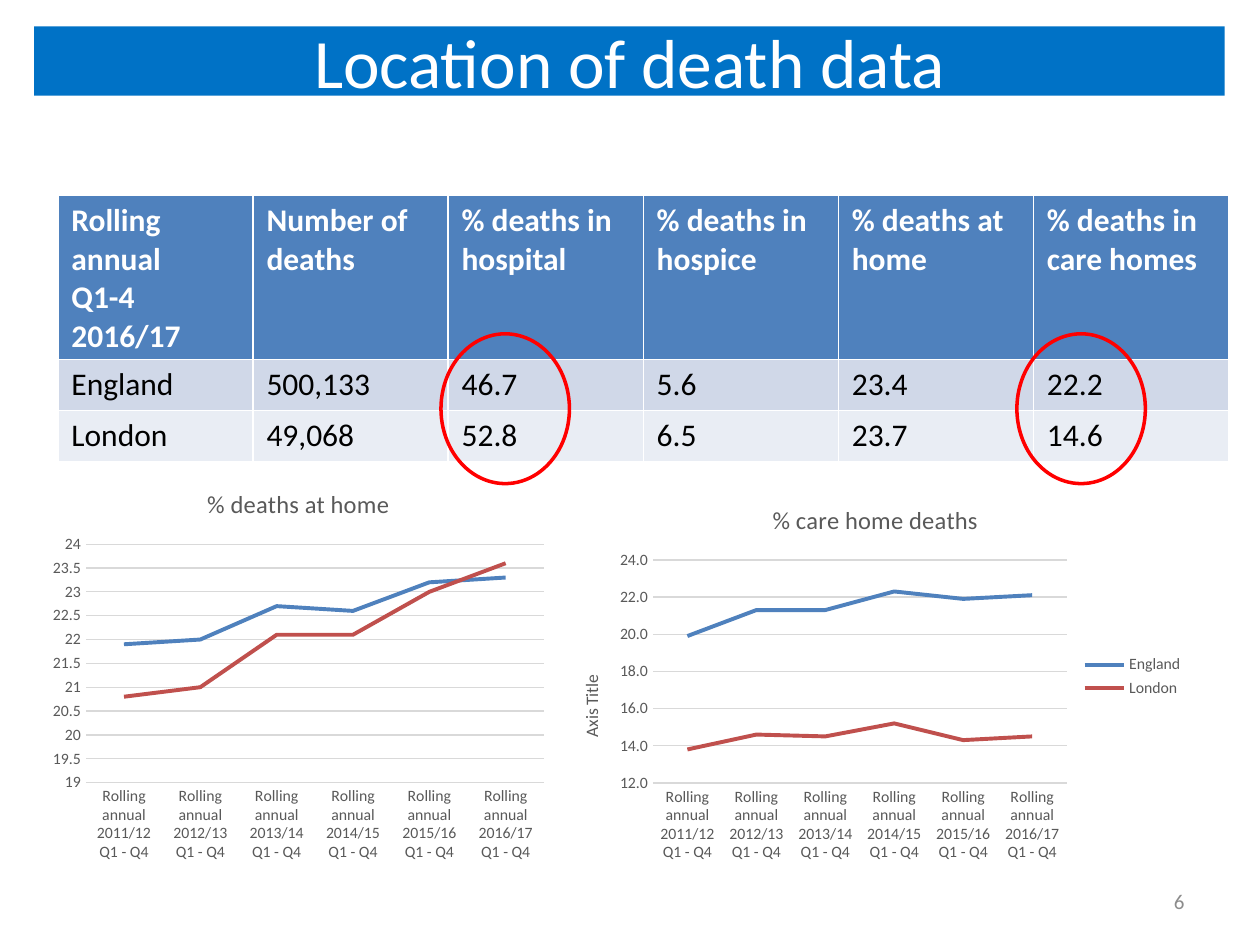
from pptx import Presentation
from pptx.chart.data import CategoryChartData as Data
from pptx.dml.color import RGBColor
from pptx.enum.chart import XL_CHART_TYPE as Kind, XL_LEGEND_POSITION as Spot, XL_TICK_MARK as Tick
from pptx.enum.shapes import MSO_SHAPE as Form
from pptx.enum.text import MSO_ANCHOR as Anchor, PP_ALIGN as Align
from pptx.util import Cm, Pt


def tint(hue):
    return RGBColor.from_string(hue)


def paint(part, hue):
    part.fill.solid()
    part.fill.fore_color.rgb = tint(hue)


def stroke(line, hue, width):
    line.color.rgb = tint(hue)
    line.width = Pt(width)


class Deck:
    """Holds the style and the current slide, and adds each kind of element."""

    face = "Calibri"
    blue, red, grey, rule = "4F81BD", "C0504D", "595959", "D9D9D9"
    bands = (blue, "D0D8E8", "E9EDF4")

    def __init__(self):
        self.show = Presentation()
        self.show.slide_width, self.show.slide_height = Cm(25.4), Cm(19.05)
        self.slide = self.show.slides.add_slide(self.show.slide_layouts[5])
        self.shapes = self.slide.shapes

    def font(self, font, size, hue, bold=False):
        font.name, font.size, font.bold = self.face, Pt(size), bold
        font.color.rgb = tint(hue)

    def title(self, text, box):
        bar = self.shapes.title
        bar.left, bar.top, bar.width, bar.height = map(Cm, box)
        paint(bar, "0072C6")
        frame = bar.text_frame
        frame.text = text
        frame.vertical_anchor = Anchor.MIDDLE
        line = frame.paragraphs[0]
        line.alignment = Align.CENTER
        self.font(line.font, 39.6, "FFFFFF")

    def number(self, text, box):
        frame = self.shapes.add_textbox(*map(Cm, box)).text_frame
        frame.word_wrap = True
        frame.vertical_anchor = Anchor.MIDDLE
        line = frame.paragraphs[0]
        line.text, line.alignment = text, Align.RIGHT
        self.font(line.font, 12, "8C8C8C")

    def table(self, rows, box, highs):
        grid = self.shapes.add_table(len(rows), len(rows[0]), *map(Cm, box)).table
        for r, row in enumerate(rows):
            grid.rows[r].height = Cm(highs[r])
            for c, text in enumerate(row):
                cell = grid.cell(r, c)
                cell.text = text
                cell.margin_left = cell.margin_right = Cm(0.27)
                paint(cell, self.bands[r])
                for line in cell.text_frame.paragraphs:
                    self.font(line.font, 18, "000000" if r else "FFFFFF", r == 0)

    def axis(self, axis):
        axis.major_tick_mark = axis.minor_tick_mark = Tick.NONE
        self.font(axis.tick_labels.font, 9, self.grey)

    def chart(self, title, cats, series, box, scale, form, label=None):
        data = Data(number_format=form)
        data.categories = cats
        for name, vals in series.items():
            data.add_series(name, vals)
        chart = self.shapes.add_chart(Kind.LINE, *map(Cm, box), data).chart
        self.font(chart.font, 10, "000000")
        chart.has_title = True
        head = chart.chart_title
        head.include_in_layout = False
        head.text_frame.text = title
        self.font(head.text_frame.paragraphs[0].font, 14, self.grey)
        for line, hue in zip(chart.plots[0].series, (self.blue, self.red)):
            line.smooth = False
            stroke(line.format.line, hue, 2.25)
        base, side = chart.category_axis, chart.value_axis
        self.axis(base)
        self.axis(side)
        stroke(base.format.line, self.rule, 0.75)
        side.format.line.fill.background()
        stroke(side.major_gridlines.format.line, self.rule, 0.75)
        side.minimum_scale, side.maximum_scale, side.major_unit = scale
        side.tick_labels.number_format = form
        side.tick_labels.number_format_is_linked = False
        chart.has_legend = label is not None
        if label:
            chart.legend.position = Spot.RIGHT
            chart.legend.include_in_layout = False
            self.font(chart.legend.font, 9, self.grey)
            frame = side.axis_title.text_frame
            frame.text = label
            self.font(frame.paragraphs[0].font, 10, self.grey)

    def ring(self, box):
        ring = self.shapes.add_shape(Form.OVAL, *map(Cm, box))
        ring.shadow.inherit = False
        ring.fill.background()
        stroke(ring.line, "FF0000", 2)


def main():
    deck = Deck()
    deck.title("Location of death data", (0.69, 0.53, 24, 1.4))
    deck.number("6", (18.21, 17.65, 5.92, 1.02))
    years = [f"Rolling annual 20{y}/{y + 1} Q1 - Q4" for y in range(11, 17)]
    home = {
        "Series 1": (21.9, 22, 22.7, 22.6, 23.2, 23.3),
        "Series 2": (20.8, 21, 22.1, 22.1, 23, 23.6),
    }
    care = {
        "England": (19.9, 21.3, 21.3, 22.3, 21.9, 22.1),
        "London": (13.8, 14.6, 14.5, 15.2, 14.3, 14.5),
    }
    deck.chart("% deaths at home", years, home, (0.86, 9.42, 10.31, 8.1),
               (19, 24, 0.5), "General")
    deck.chart("% care home deaths", years, care, (11.18, 9.75, 12.93, 7.77),
               (12, 24, 2), "#,##0.0", "Axis Title")
    rows = [
        ("Rolling annual\nQ1-4 2016/17", "Number of deaths", "% deaths in hospital",
         "% deaths in hospice", "% deaths at home", "% deaths in care homes"),
        ("England", "500,133", "46.7", "5.6", "23.4", "22.2"),
        ("London", "49,068", "52.8", "6.5", "23.7", "14.6"),
    ]
    deck.table(rows, (1.17, 3.94, 23.6, 5.36), (3.3, 1.03, 1.03))
    for left in (20.5, 8.89):
        deck.ring((left, 6.73, 2.59, 3.02))
    deck.show.save("out.pptx")


if __name__ == "__main__":
    main()
